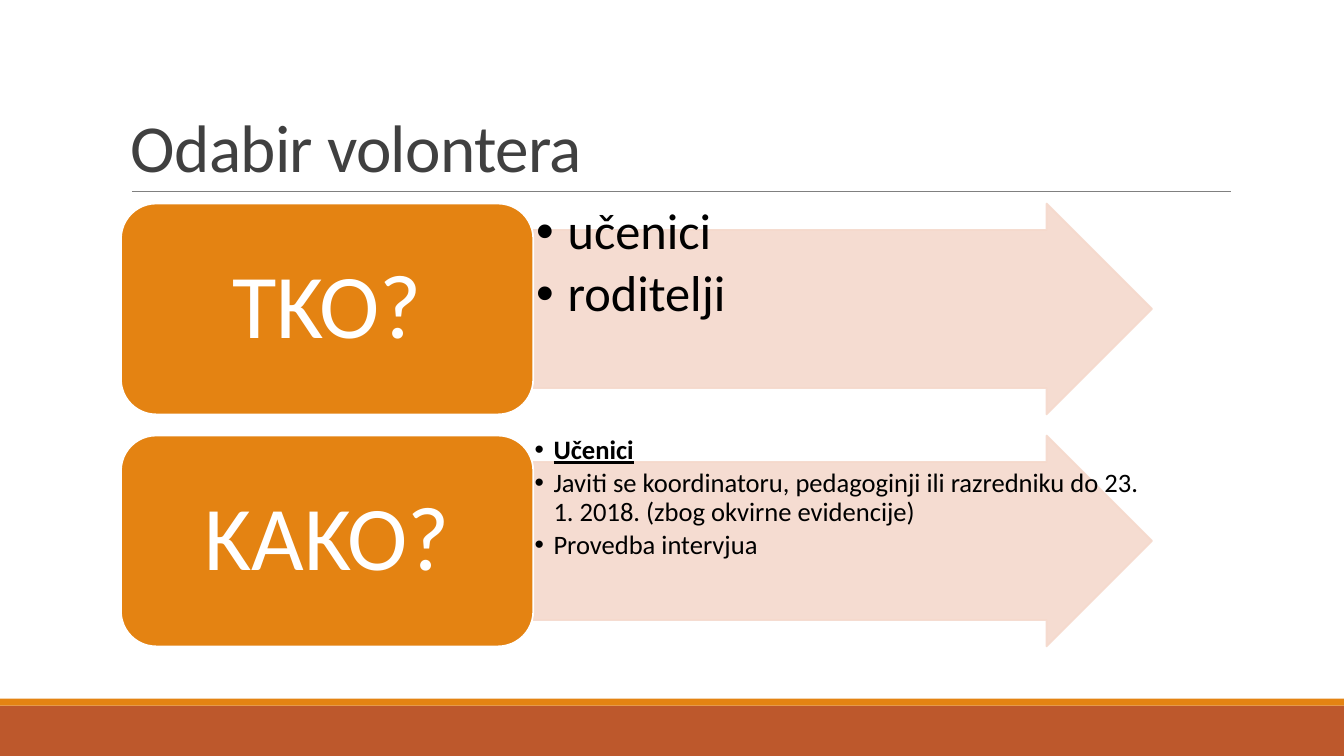
from pptx import Presentation
from pptx.util import Pt
from pptx.dml.color import RGBColor
from pptx.enum.shapes import MSO_CONNECTOR, MSO_SHAPE
from pptx.enum.text import MSO_ANCHOR, PP_ALIGN
from pptx.oxml.ns import qn
from lxml.etree import SubElement

hues = {
    "rust": "BD582C", "orange": "E48312", "pink": "F5D9CC", "gray": "808080",
    "title": "404040", "black": "000000", "white": "FFFFFF",
}


def add_box(kind, left, top, width, height, fill, edge=None):
    box = slide.shapes.add_shape(kind, Pt(left), Pt(top), Pt(width), Pt(height))
    box.shadow.inherit = False
    box.fill.solid()
    box.fill.fore_color.rgb = RGBColor.from_string(hues[fill])
    if edge:
        box.line.color.rgb = RGBColor.from_string(hues[edge])
        box.line.width = Pt(1.25)
    else:
        box.line.fill.background()
    return box


def add_run(para, text, size, hue, space):
    para.line_spacing = space
    run = para.add_run()
    run.text = text
    run.font.name = "Calibri"
    run.font.size = Pt(size)
    run.font.color.rgb = RGBColor.from_string(hues[hue])
    return run


deck = Presentation()
deck.slide_width, deck.slide_height = Pt(960), Pt(540)
slide = deck.slides.add_slide(deck.slide_layouts[6])

# Footer bands
add_box(MSO_SHAPE.RECTANGLE, 0, 504, 960, 36, "rust")
add_box(MSO_SHAPE.RECTANGLE, 0, 499, 960, 5, "orange")

# Title and its rule
rule = slide.shapes.add_connector(
    MSO_CONNECTOR.STRAIGHT, Pt(94.2), Pt(136.8), Pt(879), Pt(136.8))
rule.line.color.rgb = RGBColor.from_string(hues["gray"])
rule.line.width = Pt(0.5)
SubElement(rule._element.spPr, qn("a:effectLst"))

title = slide.shapes.add_textbox(Pt(86.4), Pt(22.3), Pt(792), Pt(114.5)).text_frame
title.word_wrap = True
title.vertical_anchor = MSO_ANCHOR.BOTTOM
run = add_run(title.paragraphs[0], "Odabir volontera", 48, "title", 0.85)
run.font._element.set("spc", "-50")

# Question rows: label, text size, indent, inset, bullet lines
rows = [
    ("TKO?", 36, 22.5, 2, ["učenici", "roditelji"]),
    ("KAKO?", 19, 13.5, 1, [
        "Učenici",
        "Javiti se koordinatoru, pedagoginji ili razredniku do 23. 1. 2018. "
        "(zbog okvirne evidencije)",
        "Provedba intervjua"]),
]
left, mid, wide, high = 86.4, 380.9, 442, 150.6
for num, (label, size, dent, inset, lines) in enumerate(rows):
    top = 145.4 + num * 165.7

    # Arrow behind the bullets
    arrow = add_box(MSO_SHAPE.RIGHT_ARROW, mid, top, wide, high, "pink", "pink")
    arrow.adjustments[0], arrow.adjustments[1] = 0.75, 0.5
    for tint in arrow._element.spPr.iter(qn("a:srgbClr")):
        SubElement(tint, qn("a:alpha"), val="90000")

    # Bullet list
    frame = slide.shapes.add_textbox(Pt(mid), Pt(top), Pt(wide), Pt(high)).text_frame
    frame.word_wrap = True
    frame.margin_left = frame.margin_right = Pt(inset)
    frame.margin_top = frame.margin_bottom = Pt(inset)
    for pos, line in enumerate(lines):
        para = frame.paragraphs[0] if pos == 0 else frame.add_paragraph()
        run = add_run(para, line, size, "black", 0.9)
        para.space_after = Pt(size * 0.15)
        if line == "Učenici":
            run.font.bold = run.font.underline = True
        props = para._p.get_or_add_pPr()
        props.set("marL", str(Pt(dent)))
        props.set("indent", str(-Pt(dent)))
        SubElement(props, qn("a:buFont"), typeface="Arial")
        SubElement(props, qn("a:buChar"), char="•")

    # Label block
    block = add_box(
        MSO_SHAPE.ROUNDED_RECTANGLE, left, top, mid - left, high, "orange", "white")
    block.text_frame.vertical_anchor = MSO_ANCHOR.MIDDLE
    para = block.text_frame.paragraphs[0]
    para.alignment = PP_ALIGN.CENTER
    add_run(para, label, 65, "white", 0.9)

deck.save("out.pptx")
